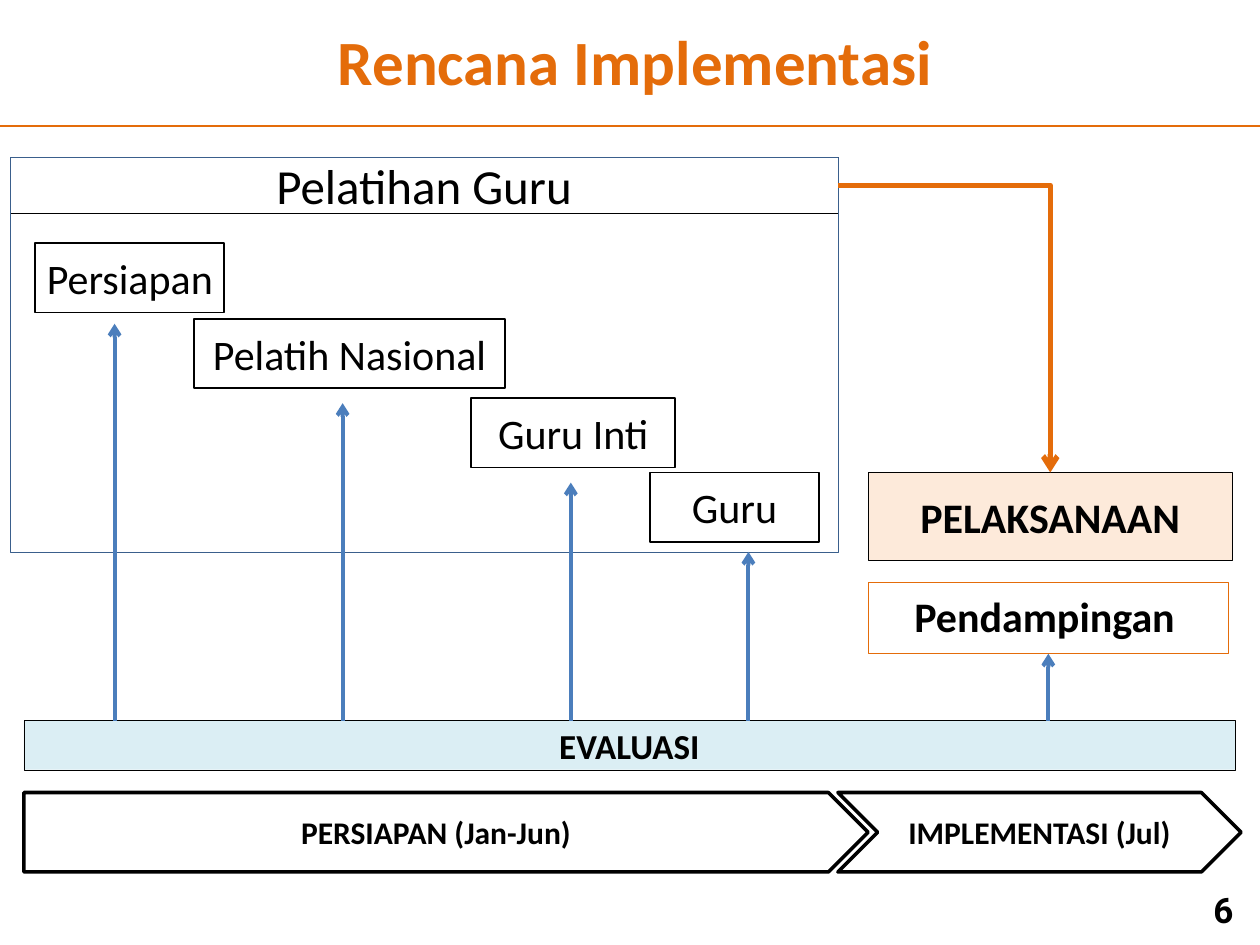
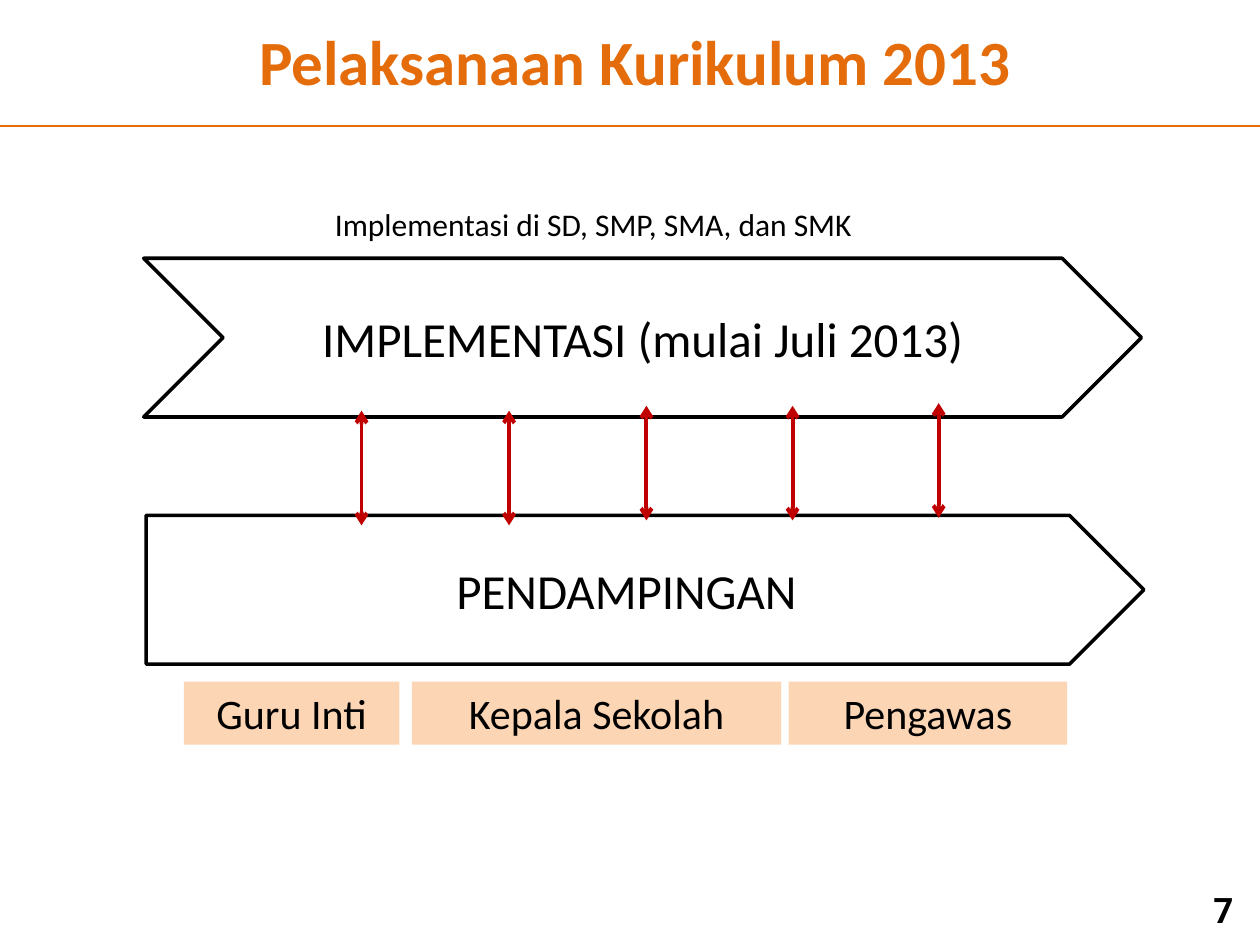
from dataclasses import dataclass
from typing import Any, NamedTuple, Optional

import lxml.etree
import pptx
import pptx.dml.color
import pptx.enum.shapes
import pptx.enum.text
import pptx.oxml.ns
import pptx.util

Pt = pptx.util.Pt
Kind = pptx.enum.shapes.MSO_SHAPE
Wire = pptx.enum.shapes.MSO_CONNECTOR
Align = pptx.enum.text.PP_ALIGN
Anchor = pptx.enum.text.MSO_ANCHOR
qn = pptx.oxml.ns.qn


@dataclass(frozen=True)
class Theme:
    font: str = "Calibri"
    digit: str = "Roboto"
    ink: str = "000000"
    orange: str = "E46C0A"
    frame: str = "3A5F8C"
    blue: str = "4B7EBC"
    red: str = "C00000"
    cream: str = "FDEADA"
    peach: str = "FCD5B5"
    sky: str = "DBEEF4"
    title: float = 36
    head: float = 28
    label: float = 24
    band: float = 20
    small: float = 18
    hair: float = 0.25


THEME = Theme()


class Box(NamedTuple):
    left: float
    top: float
    width: float
    height: float

    def points(self) -> list[pptx.util.Length]:
        return [Pt(side) for side in self]


class Point(NamedTuple):
    x: float
    y: float


@dataclass(frozen=True)
class Type:
    size: float
    bold: bool = False
    color: str = THEME.ink
    font: str = THEME.font
    align: Any = Align.CENTER


@dataclass(frozen=True)
class Pen:
    color: str
    width: float


@dataclass(frozen=True)
class Step:
    """A stage of teacher training and the tip of the arrow that reaches it."""
    name: str
    left: float
    top: float
    width: float
    tip: Point


@dataclass(frozen=True)
class Actor:
    name: str
    left: float
    width: float


HAIR = Pen(THEME.ink, THEME.hair)
THIN = Pen(THEME.ink, 1)
BOLD = Pen(THEME.ink, 2)
BLUE = Pen(THEME.blue, 2.25)
RED = Pen(THEME.red, 2.25)

TITLE = Box(5.8, 9.4, 714.2, 51.1)
NUMBER = Box(669.6, 505.4, 59, 28.8)
RULE = Point(723.6, 72)

PANEL = Box(5.8, 90, 473, 225.4)
HEADER = PANEL._replace(height=31.7)
EVAL = Box(13.7, 411.8, 691.9, 28.1)
STEP_HIGH = 39.6
STEPS = [
    Step("Persiapan", 20.2, 139, 108, Point(65.5, 185)),
    Step("Pelatih Nasional", 110.9, 182.2, 177.8, Point(195.8, 230.4)),
    Step("Guru Inti", 269.3, 227.5, 116.6, Point(326.2, 275.8)),
    Step("Guru", 371.5, 270, 96.5, Point(427.7, 315.4)),
]

LINK_HIGH = 65.5
LINKS = [Point(206.6, 300.2), Point(290.9, 300.2), Point(369.4, 297.4),
         Point(452.9, 297.4), Point(536.4, 295.9)]
ACTORS = [Actor("Guru Inti", 105.1, 123.1),
          Actor("Kepala Sekolah", 235.4, 211),
          Actor("Pengawas", 450.7, 159.1)]


def rgb(color: str) -> pptx.dml.color.RGBColor:
    return pptx.dml.color.RGBColor.from_string(color)


def write(shape: Any, text: str, style: Type, anchor: Any = Anchor.MIDDLE,
          tight: bool = False, wrap: bool = True) -> None:
    """Set the text of a shape; tight removes the inner margins."""
    frame = shape.text_frame
    frame.text = text
    frame.word_wrap = wrap
    frame.vertical_anchor = anchor
    if tight:
        frame.margin_left = frame.margin_right = 0
        frame.margin_top = frame.margin_bottom = 0
    line = frame.paragraphs[0]
    line.alignment = style.align
    for run in line.runs:
        run.font.name = style.font
        run.font.size = Pt(style.size)
        run.font.bold = style.bold
        run.font.color.rgb = rgb(style.color)


def draw(slide: Any, kind: Any, box: Box, pen: Optional[Pen] = None,
         fill: Optional[str] = None) -> Any:
    shape = slide.shapes.add_shape(kind, *box.points())
    shape.shadow.inherit = False
    if fill:
        shape.fill.solid()
        shape.fill.fore_color.rgb = rgb(fill)
    else:
        shape.fill.background()
    if pen:
        shape.line.color.rgb = rgb(pen.color)
        shape.line.width = Pt(pen.width)
    else:
        shape.line.fill.background()
    return shape


def note(slide: Any, box: Box, text: str, style: Type, **layout: Any) -> None:
    write(slide.shapes.add_textbox(*box.points()), text, style, **layout)


def join(slide: Any, start: Point, end: Point, pen: Pen,
         ends: tuple[str, ...] = (), bent: bool = False) -> Any:
    """Draw a connector; ends lists headEnd and tailEnd, in that order."""
    kind = Wire.ELBOW if bent else Wire.STRAIGHT
    wire = slide.shapes.add_connector(kind, *map(Pt, (*start, *end)))
    wire.line.color.rgb = rgb(pen.color)
    wire.line.width = Pt(pen.width)
    props = wire._element.spPr
    for end_name in ends:
        lxml.etree.SubElement(props.find(qn("a:ln")), qn(f"a:{end_name}"),
                              type="arrow")
    lxml.etree.SubElement(props, qn("a:effectLst"))
    if bent:
        props.find(qn("a:prstGeom")).set("prst", "bentConnector2")
    return wire


def start_slide(deck: Any, title: str, number: int) -> Any:
    slide = deck.slides.add_slide(deck.slide_layouts.get_by_name("Title Only"))
    join(slide, Point(0, RULE.y), RULE, Pen(THEME.orange, 1.5))
    head = slide.shapes.title
    head.left, head.top, head.width, head.height = TITLE.points()
    write(head, title, Type(THEME.title, True, THEME.orange), Anchor.TOP)
    note(slide, NUMBER, str(number), Type(THEME.band, True, font=THEME.digit))
    return slide


def draw_plan(deck: Any) -> None:
    slide = start_slide(deck, "Rencana Implementasi", 6)
    label = Type(THEME.label)
    strong = Type(THEME.label, True)

    header = draw(slide, Kind.RECTANGLE, HEADER, HAIR)
    write(header, "Pelatihan Guru", Type(THEME.head), tight=True)
    target = draw(slide, Kind.RECTANGLE, Box(496.1, 270, 208.1, 50.4), HAIR,
                  THEME.cream)
    write(target, "PELAKSANAAN", strong, tight=True)
    draw(slide, Kind.RECTANGLE, PANEL, Pen(THEME.frame, THEME.hair))

    review = draw(slide, Kind.RECTANGLE, EVAL, HAIR, THEME.sky)
    write(review, "EVALUASI", Type(THEME.band, True), tight=True)
    for step in STEPS:
        box = Box(step.left, step.top, step.width, STEP_HIGH)
        write(draw(slide, Kind.RECTANGLE, box, THIN), step.name, label,
              tight=True)
        join(slide, Point(step.tip.x, EVAL.top), step.tip, BLUE, ("tailEnd",))

    coach = Box(496.1, 332.6, 205.9, 41)
    frame = draw(slide, Kind.RECTANGLE, coach, Pen(THEME.orange, THEME.hair))
    note(slide, Box(513.4, 337.7, 167, 28.1), "Pendampingan", strong,
         tight=True)
    mid = coach.left + coach.width / 2
    rise = join(slide, Point(mid, EVAL.top),
                Point(mid, coach.top + coach.height), BLUE, ("tailEnd",))
    rise.end_connect(frame, 2)

    for kind, left, width, text in (
            (Kind.PENTAGON, 13.7, 482.4, "PERSIAPAN (Jan-Jun)"),
            (Kind.CHEVRON, 478.8, 230.4, "IMPLEMENTASI (Jul)")):
        phase = draw(slide, kind, Box(left, 452.9, width, 45.4), BOLD)
        write(phase, text, Type(THEME.small, True))

    turn = join(slide, Point(478.8, 105.8), Point(600.2, 270),
                Pen(THEME.orange, 3), ("tailEnd",), bent=True)
    turn.begin_connect(header, 3)
    turn.end_connect(target, 0)


def draw_rollout(deck: Any) -> None:
    slide = start_slide(deck, "Pelaksanaan Kurikulum 2013", 7)
    for kind, box, text in (
            (Kind.CHEVRON, Box(82.1, 147.6, 570.2, 90.7),
             "IMPLEMENTASI (mulai Juli 2013)"),
            (Kind.PENTAGON, Box(83.5, 294.5, 570.2, 85), "PENDAMPINGAN")):
        write(draw(slide, kind, box, BOLD), text, Type(THEME.head))
    note(slide, Box(184.3, 113.8, 313.2, 28.8),
         "Implementasi di SD, SMP, SMA, dan SMK",
         Type(THEME.small, align=Align.LEFT), anchor=Anchor.TOP, wrap=False)
    for foot in LINKS:
        join(slide, foot, Point(foot.x, foot.y - LINK_HIGH), RED,
             ("headEnd", "tailEnd"))
    for actor in ACTORS:
        box = Box(actor.left, 389.5, actor.width, 36)
        write(draw(slide, Kind.RECTANGLE, box, fill=THEME.peach), actor.name,
              Type(THEME.label), Anchor.TOP)


def main() -> None:
    deck = pptx.Presentation()
    deck.slide_width, deck.slide_height = Pt(720), Pt(540)
    draw_plan(deck)
    draw_rollout(deck)
    deck.save("out.pptx")


if __name__ == "__main__":
    main()
